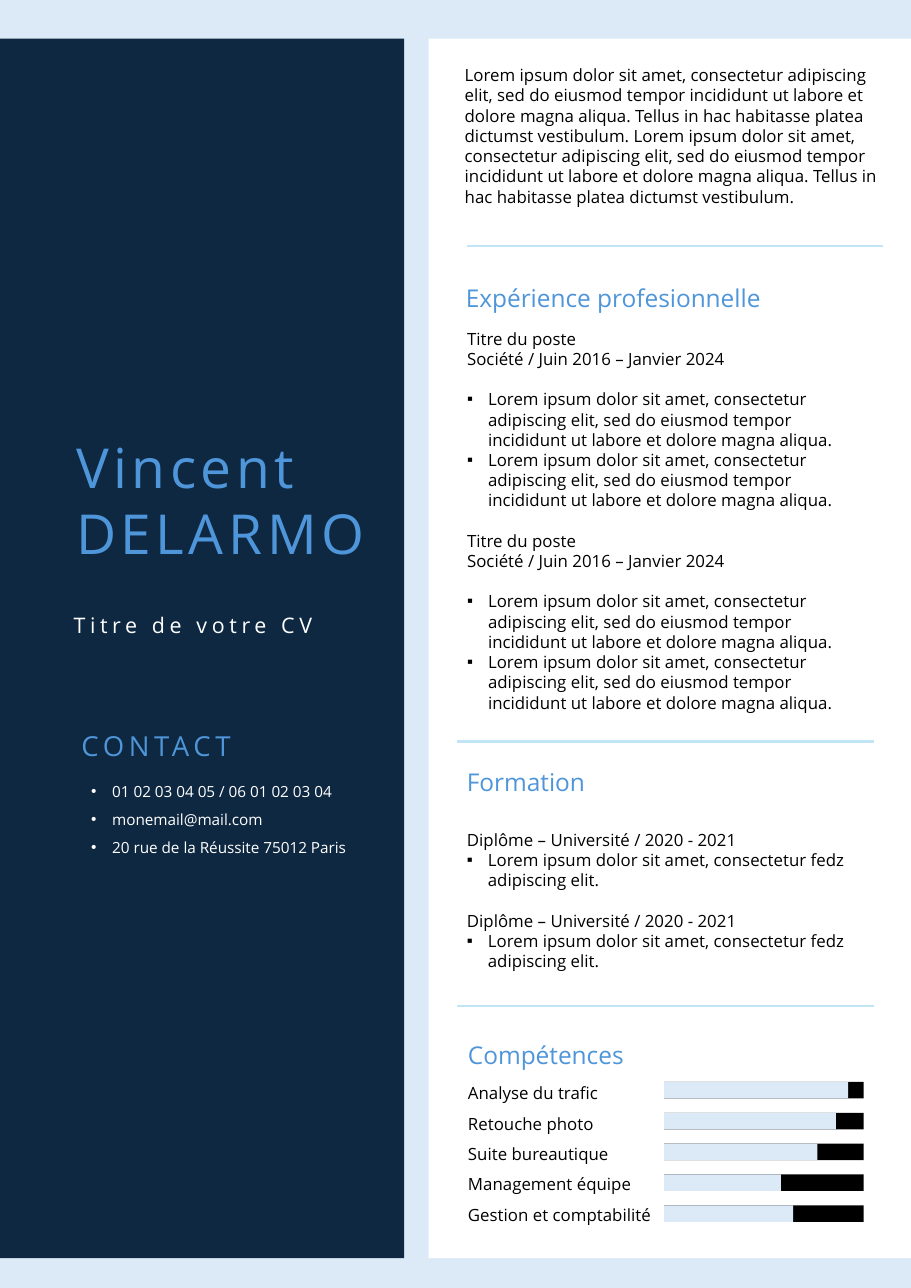
from lxml.etree import SubElement
from pptx import Presentation
from pptx.dml.color import RGBColor
from pptx.enum.shapes import MSO_CONNECTOR, MSO_SHAPE
from pptx.enum.text import MSO_ANCHOR, MSO_AUTO_SIZE, PP_ALIGN
from pptx.oxml.ns import qn
from pptx.util import Inches, Pt

FONT = "Open Sans"
NAVY, PALE, BLUE, RULE = "0E2841", "DCEAF7", "4E95D9", "C1E5F5"
WHITE, BLACK = "FFFFFF", "000000"
GAP = 13.2

LOREM = ("Lorem ipsum dolor sit amet, consectetur adipiscing elit, sed do eiusmod "
         "tempor incididunt ut labore et dolore magna aliqua.")
HABITASSE = "Tellus in hac habitasse platea dictumst vestibulum."
PROFILE = f"{LOREM} {HABITASSE} {LOREM} {HABITASSE}"

JOB = [
    ("Titre du poste", "", GAP),
    ("Société / Juin 2016 – Janvier 2024", "", 0),
    (LOREM, "▪", GAP),
    (LOREM, "▪", 0),
]
DEGREE = [
    ("Diplôme – Université / 2020 - 2021", "", GAP),
    ("Lorem ipsum dolor sit amet, consectetur fedz adipiscing elit.", "▪", 0),
]
NAME = [("Vincent", "", 0), ("DELARMO", "", 0)]
CONTACT = [
    ("01 02 03 04 05 / 06 01 02 03 04", "•", 0),
    ("monemail@mail.com", "•", 0),
    ("20 rue de la Réussite 75012 Paris", "•", 0),
]
SKILLS = [
    ("Analyse du trafic", 1.67),
    ("Retouche photo", 1.56),
    ("Suite bureautique", 1.39),
    ("Management équipe", 1.06),
    ("Gestion et comptabilité", 1.17),
]
HEADINGS = [
    ("Expérience profesionnelle", 4.13, 2.52, 4.01),
    ("Formation", 4.14, 6.91, 2.71),
    ("Compétences", 4.15, 9.39, 2.71),
]
PANELS = [(0, 3.67, NAVY), (3.89, 4.38, WHITE)]
RULES = [(4.24, 2.23), (4.15, 6.73), (4.15, 9.13)]
RULE_LENGTH = 3.78
BAR_LEFT, BAR_TOP, BAR_STEP, BAR_WIDTH, BAR_HEIGHT = 6.03, 9.82, 0.28, 1.81, 0.15


def color(value):
    return RGBColor.from_string(value)


def add_block(page, left, top, width, height, fill):
    block = page.shapes.add_shape(MSO_SHAPE.RECTANGLE, Inches(left), Inches(top),
                                  Inches(width), Inches(height))
    block.shadow.inherit = False
    block.fill.solid()
    block.fill.fore_color.rgb = color(fill)
    block.line.fill.background()


def add_rule(page, left, top):
    rule = page.shapes.add_connector(MSO_CONNECTOR.STRAIGHT, Inches(left), Inches(top),
                                     Inches(left + RULE_LENGTH), Inches(top))
    rule.line.color.rgb = color(RULE)
    rule.line.width = Pt(1.5)
    SubElement(rule.element.spPr, qn("a:effectLst"))


def set_bullet(paragraph, bullet):
    properties = paragraph._p.get_or_add_pPr()
    indent = Inches(0.19) if bullet else 0
    properties.set("marL", str(indent))
    properties.set("indent", str(-indent))
    if bullet:
        SubElement(properties, qn("a:buFont")).set("typeface", "Arial")
        SubElement(properties, qn("a:buChar")).set("char", bullet)
    else:
        SubElement(properties, qn("a:buNone"))


def write(box, lines, size, fill, line_spacing=1.0, tracking=0):
    frame = box.text_frame
    frame.word_wrap = True
    frame.auto_size = MSO_AUTO_SIZE.NONE
    frame.vertical_anchor = MSO_ANCHOR.TOP
    for index, (text, bullet, gap) in enumerate(lines):
        para = frame.add_paragraph() if index else frame.paragraphs[0]
        para.text = text
        set_bullet(para, bullet)
        para.alignment = PP_ALIGN.LEFT
        para.line_spacing = line_spacing
        para.space_before = Pt(gap if index else 0)
        para.font.name = FONT
        para.font.size = Pt(size)
        para.font.color.rgb = color(fill)
        if tracking:
            para._p.pPr.find(qn("a:defRPr")).set("spc", str(tracking * 100))


def add_text(page, left, top, width, height, *style, **spacing):
    box = page.shapes.add_textbox(Inches(left), Inches(top), Inches(width), Inches(height))
    write(box, *style, **spacing)


def place(placeholder, left, top, width, height):
    placeholder.left, placeholder.top = Inches(left), Inches(top)
    placeholder.width, placeholder.height = Inches(width), Inches(height)
    placeholder.element.getparent().append(placeholder.element)


def main():
    deck = Presentation()
    deck.slide_width, deck.slide_height = Inches(8.27), Inches(11.69)
    page = deck.slides.add_slide(deck.slide_layouts[1])
    page.background.fill.solid()
    page.background.fill.fore_color.rgb = color(PALE)
    title, experience = page.placeholders

    for left, width, fill in PANELS:
        add_block(page, left, 0.35, width, 11.07, fill)

    place(title, 0.59, 3.88, 2.96, 1.31)
    write(title, NAME, 36, BLUE, tracking=3)
    add_text(page, 0.57, 5.51, 2.97, 0.34, [("Titre de votre CV", "", 0)], 14, WHITE, tracking=3)
    add_text(page, 0.64, 6.57, 2.49, 0.4, [("CONTACT", "", 0)], 18, BLUE, tracking=3)
    add_text(page, 0.73, 6.97, 2.62, 0.83, CONTACT, 10, WHITE, line_spacing=1.5)

    add_text(page, 4.12, 0.54, 4.01, 1.77, [(PROFILE, "", 0)], 11, BLACK)
    for left, top in RULES:
        add_rule(page, left, top)
    for heading, left, top, width in HEADINGS:
        add_text(page, left, top, width, 0.37, [(heading, "", 0)], 16, BLUE)

    place(experience, 4.14, 2.93, 3.89, 3.8)
    write(experience, JOB * 2, 11, BLACK)
    add_text(page, 4.14, 7.48, 3.89, 1.4, DEGREE * 2, 11, BLACK)

    skill_lines = [(skill, "", 0) for skill, level in SKILLS]
    add_text(page, 4.15, 9.69, 2.05, 1.46, skill_lines, 11, BLACK, line_spacing=1.5)
    for index, (skill, level) in enumerate(SKILLS):
        for width, fill in ((BAR_WIDTH, BLACK), (level, PALE)):
            add_block(page, BAR_LEFT, BAR_TOP + index * BAR_STEP, width, BAR_HEIGHT, fill)

    deck.save("out.pptx")


if __name__ == "__main__":
    main()
